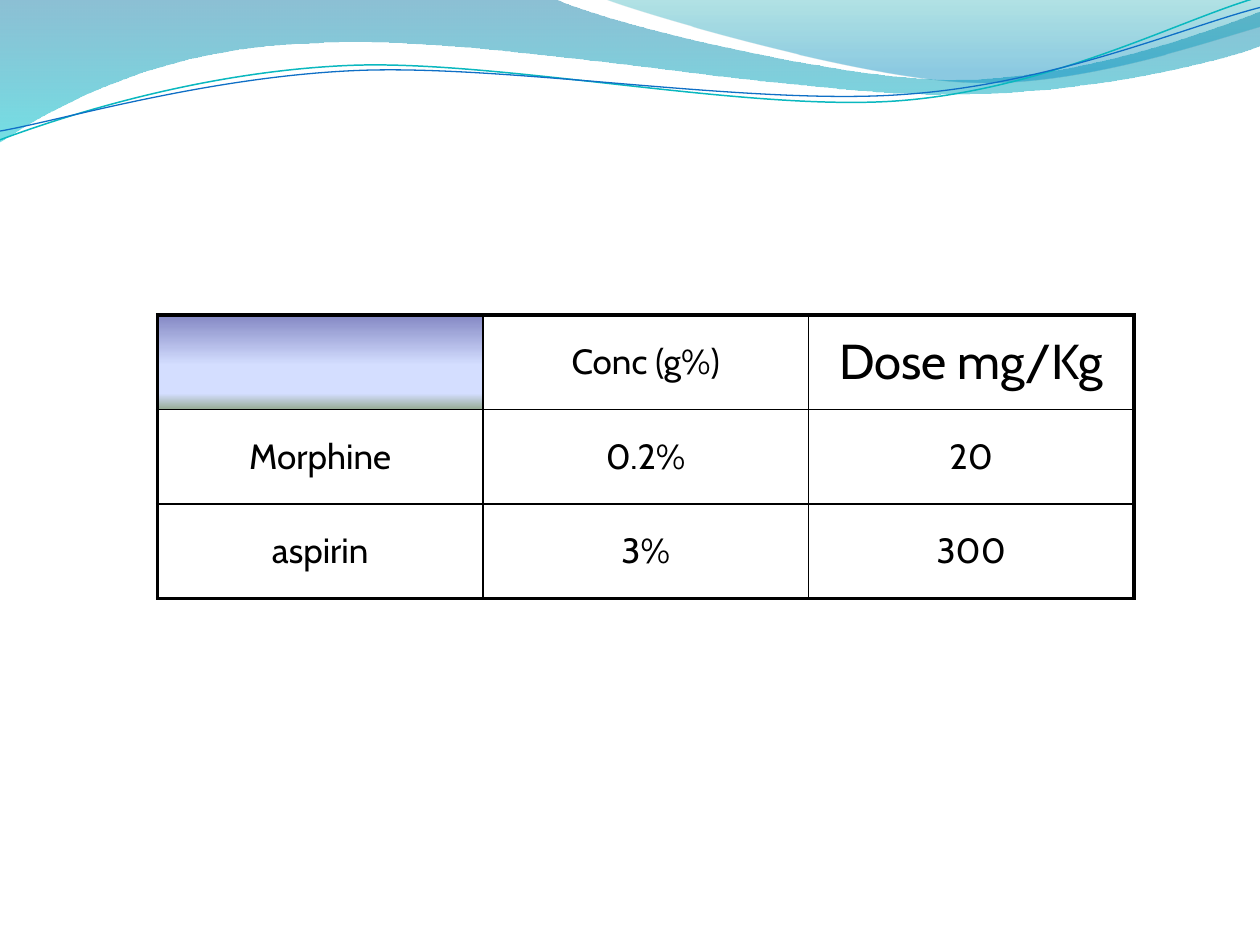
import math

from lxml import etree
from pptx import Presentation
from pptx import util as u
from pptx.dml.color import RGBColor
from pptx.enum import text
from pptx.oxml import ns

BLACK = RGBColor(0x00, 0x00, 0x00)
TEAL = RGBColor(0x0A, 0xB8, 0xBF)
BLUE = RGBColor(0x0F, 0x6F, 0xC6)
BAND_STOPS = [(0, RGBColor(0x00, 0x74, 0xA1), 45), (100, RGBColor(0x00, 0xC6, 0xCF), 55)]
CREST_STOPS = [(0, RGBColor(0x00, 0xA1, 0xA9), 30), (80, RGBColor(0x00, 0x8B, 0xBF), 45)]
CORNER_STOPS = [
    (0, RGBColor(0x84, 0x88, 0xC4), 100),
    (53, RGBColor(0xD4, 0xDE, 0xFF), 100),
    (83, RGBColor(0xD4, 0xDE, 0xFF), 100),
    (100, RGBColor(0x96, 0xAB, 0x94), 100),
]

BAND = [
    [(0, 0)],
    [(316.8, -0.7)],
    [(342.7, 12.2), (478, 45.4), (545.8, 45.4)],
    [(614.2, 45.4), (689.8, 18.7), (720, 6.5)],
    [(720.7, 25.9)],
    [(707.8, 31.7), (626.4, 54.7), (537.1, 54)],
    [(447.8, 54), (275, 20.2), (185, 24.5)],
    [(92.9, 25.9), (33.1, 59.8), (-0.7, 81.4)],
]
CREST = [
    [(344.9, -0.7)],
    [(366.5, 7.9), (491, 44.6), (553.7, 46.8)],
    [(616.3, 49.7), (691.9, 23), (720, 15.1)],
    [(720, 0)],
]
TEAL_WAVE = [
    [(0, 79.9)],
    [(34.6, 67), (113.8, 41), (199.4, 37.4)],
    [(284.4, 33.8), (427, 64.1), (513.4, 57.6)],
    [(599.8, 51.1), (675.4, 10.8), (718.6, -1.4)],
]
BLUE_WAVE = [
    [(0, 74.9)],
    [(33.8, 69.1), (118.1, 43.9), (203.8, 40.3)],
    [(290.2, 36.7), (429.8, 60.5), (516.2, 54)],
    [(601.9, 48.2), (677.5, 15.1), (720, 4.3)],
]
TEAL_CENTRE = (359.28, 41.4)
BLUE_CENTRE = (359.64, 42.48)
WAVE_TILT = -2.7

ROWS = [
    ["", "Conc (g%)", "Dose mg/Kg"],
    ["Morphine", "0.2%", "20"],
    ["aspirin", "3%", "300"],
]
LARGE_HEADING = "Dose mg/Kg"
UNITS_PER_POINT = 100


def turn(point, centre, degrees):
    """Return a point turned clockwise about a centre."""
    x, y = point[0] - centre[0], point[1] - centre[1]
    cosine, sine = math.cos(math.radians(degrees)), math.sin(math.radians(degrees))
    return centre[0] + x * cosine - y * sine, centre[1] + x * sine + y * cosine


def bend_segments(shape, segments):
    """Join each run of three control points into one cubic curve."""
    outline = next(shape.element.iter(ns.qn("a:path")))
    lines = iter(outline.findall(ns.qn("a:lnTo")))
    for segment in segments[1:]:
        members = [next(lines) for _ in segment]
        if len(members) == 3:
            curve = etree.Element(ns.qn("a:cubicBezTo"))
            members[0].addprevious(curve)
            for member in members:
                curve.append(member[0])
                outline.remove(member)


def add_outline(page, segments, close):
    """Draw an unfilled curved freeform without a shadow."""
    points = [(x * UNITS_PER_POINT, y * UNITS_PER_POINT)
              for segment in segments for x, y in segment]
    builder = page.shapes.build_freeform(*points[0], scale=u.Pt(1) / UNITS_PER_POINT)
    builder.add_line_segments(points[1:], close=close)
    shape = builder.convert_to_shape()
    bend_segments(shape, segments)
    shape.shadow.inherit = False
    shape.fill.background()
    return shape


def set_gradient(fill, properties, stops):
    """Give a shape or cell a vertical gradient with opacities."""
    fill.background()
    gradient = etree.Element(ns.qn("a:gradFill"), rotWithShape="1")
    stop_list = etree.SubElement(gradient, ns.qn("a:gsLst"))
    for position, color, opacity in stops:
        stop = etree.SubElement(stop_list, ns.qn("a:gs"), pos=str(position * 1000))
        shade = etree.SubElement(stop, ns.qn("a:srgbClr"), val=str(color))
        if opacity < 100:
            etree.SubElement(shade, ns.qn("a:alpha"), val=str(opacity * 1000))
    etree.SubElement(gradient, ns.qn("a:lin"), ang="5400000", scaled="0")
    properties.replace(properties.find(ns.qn("a:noFill")), gradient)


def add_wave_area(page, segments, stops):
    """Add a closed wave filled with a gradient."""
    shape = add_outline(page, segments, close=True)
    shape.line.fill.background()
    set_gradient(shape.fill, shape.element.spPr, stops)


def add_wave_line(page, segments, centre, color, width):
    """Add an open wavy line, tilted about its centre."""
    level = [[turn(point, centre, -WAVE_TILT) for point in segment] for segment in segments]
    shape = add_outline(page, level, close=False)
    shape.rotation = WAVE_TILT
    shape.line.color.rgb = color
    shape.line.width = u.Pt(width)


def set_borders(properties, outer_sides):
    """Draw thick borders on the outer sides and thin ones elsewhere."""
    for index, side in enumerate("LRTB"):
        width = u.Pt(2.25 if side in outer_sides else 1)
        border = etree.Element(ns.qn(f"a:ln{side}"), w=str(width))
        solid = etree.SubElement(border, ns.qn("a:solidFill"))
        etree.SubElement(solid, ns.qn("a:srgbClr"), val=str(BLACK))
        properties.insert(index, border)


def write_cell(cell, words):
    """Write centred text in a cell."""
    cell.vertical_anchor = text.MSO_ANCHOR.MIDDLE
    para = cell.text_frame.paragraphs[0]
    para.alignment = text.PP_ALIGN.CENTER
    span = para.add_run()
    span.text = words
    span.font.name = "Cabin"
    span.font.size = u.Pt(28 if words == LARGE_HEADING else 20)
    span.font.color.rgb = BLACK


def add_dose_table(page):
    """Add the table of drug concentrations and doses."""
    last_row, last_column = len(ROWS) - 1, len(ROWS[0]) - 1
    frame = page.shapes.add_table(
        len(ROWS), len(ROWS[0]), u.Pt(90), u.Pt(180), u.Pt(558), u.Pt(162))
    table = frame.table
    table.first_row = table.horz_banding = False
    for row, line in enumerate(ROWS):
        for column, words in enumerate(line):
            cell = table.cell(row, column)
            cell.fill.background()
            properties = cell._tc.get_or_add_tcPr()
            if words:
                write_cell(cell, words)
            else:
                set_gradient(cell.fill, properties, CORNER_STOPS)
            edges = {"L": column == 0, "R": column == last_column,
                     "T": row == 0, "B": row == last_row}
            set_borders(properties, [side for side, outer in edges.items() if outer])


def main():
    """Build the slide and save the deck."""
    deck = Presentation()
    deck.slide_width, deck.slide_height = u.Pt(720), u.Pt(540)
    page = deck.slides.add_slide(deck.slide_layouts[6])
    add_wave_area(page, BAND, BAND_STOPS)
    add_wave_area(page, CREST, CREST_STOPS)
    add_wave_line(page, TEAL_WAVE, TEAL_CENTRE, TEAL, 0.85)
    add_wave_line(page, BLUE_WAVE, BLUE_CENTRE, BLUE, 0.75)
    add_dose_table(page)
    deck.save("out.pptx")


if __name__ == "__main__":
    main()
